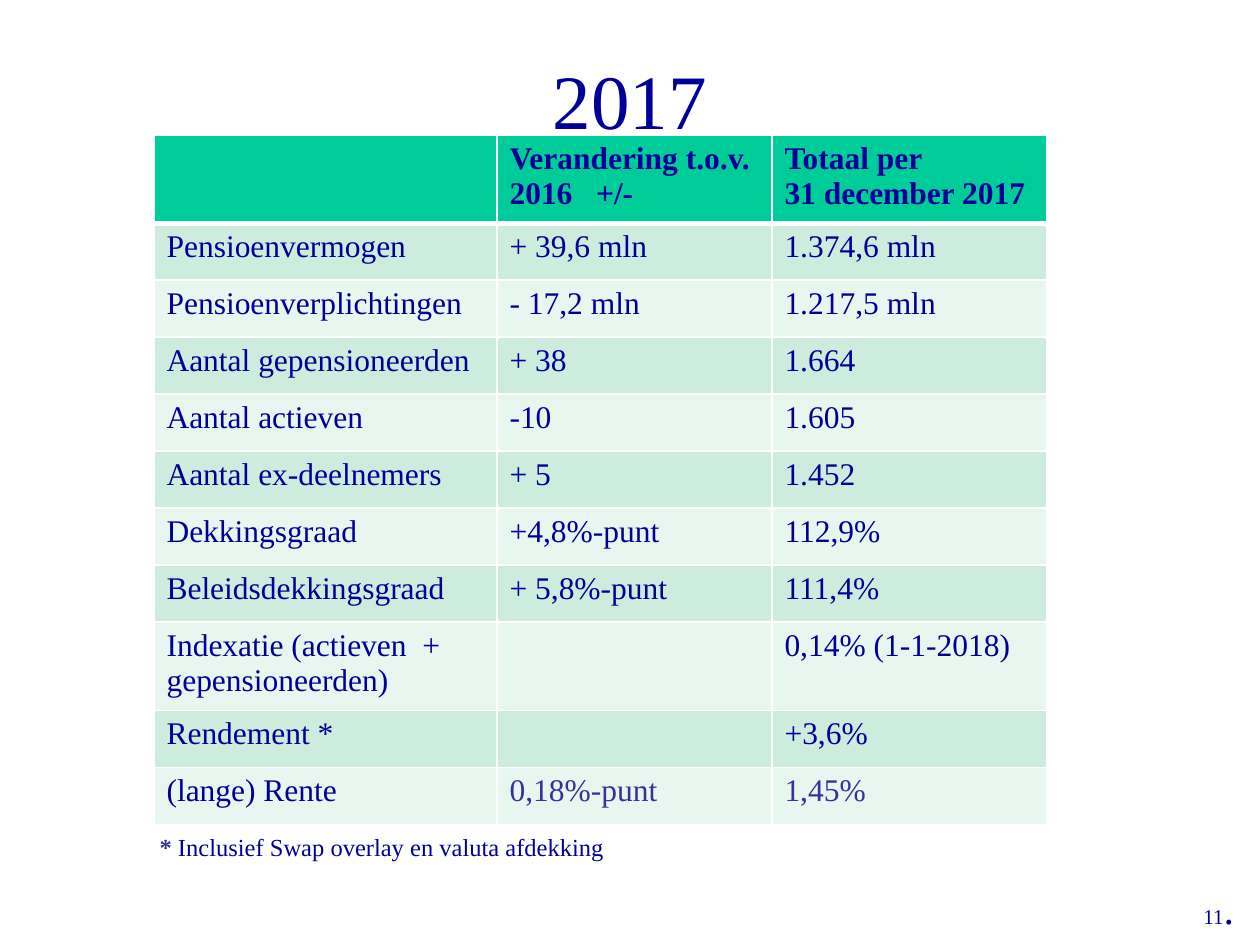
from dataclasses import dataclass

from lxml import etree
from pptx import Presentation
from pptx.dml.color import RGBColor
from pptx.enum.text import MSO_ANCHOR, PP_ALIGN
from pptx.oxml.ns import qn
from pptx.util import Emu, Pt

TOP, CENTER = MSO_ANCHOR.TOP, PP_ALIGN.CENTER


@dataclass(frozen=True)
class Theme:
    font: str = "Times New Roman"
    ink: str = "000099"
    accent: str = "333399"
    header: str = "00CC99"
    bands: tuple = ("CCECDE", "E7F6EF")
    rule: str = "FFFFFF"
    title_size: int = 44
    table_size: int = 18
    note_size: int = 14
    number_size: int = 12
    dot_size: int = 24


THEME = Theme()

YEAR = "2017"
HEADINGS = ("", "Verandering t.o.v. 2016   +/-", "Totaal per \v31 december 2017")
FIGURES = [
    ("Pensioenvermogen", "+ 39,6 mln", "1.374,6 mln"),
    ("Pensioenverplichtingen", "- 17,2 mln", "1.217,5 mln"),
    ("Aantal gepensioneerden", "+ 38", "1.664"),
    ("Aantal actieven", "-10", "1.605"),
    ("Aantal ex-deelnemers", "+ 5", "1.452"),
    ("Dekkingsgraad", "+4,8%-punt", "112,9%"),
    ("Beleidsdekkingsgraad", "+ 5,8%-punt", "111,4%"),
    ("Indexatie (actieven  + gepensioneerden)", "", "0,14% (1-1-2018)"),
    ("Rendement *", "", "+3,6%"),
    ("(lange) Rente", "0,18%-punt", "1,45%"),
]
ACCENTED = {"0,18%-punt", "1,45%"}
TALL_ROWS = {0, 8}
FOOTNOTE = ("* ", "Inclusief Swap overlay en valuta afdekking")
PAGE_NUMBER = ("11", ".")

TITLE_BOX = (63, 38, 1134, 157)
NOTE_BOX = (84, 826, 1134, 74)
NUMBER_BOX = (1191, 876, 60, 63)
TABLE_ORIGIN = (154, 135)
COLUMN_WIDTHS = (343, 275, 275)
ROW_HEIGHT, TALL_HEIGHT = 57, 86


def px(length):
    return Emu(round(length * 914400 / 126))


def place(shape, box):
    shape.left, shape.top, shape.width, shape.height = map(px, box)


def style(font, size, color=THEME.ink, bold=False):
    font.name, font.size, font.bold = THEME.font, Pt(size), bold
    font.color.rgb = RGBColor.from_string(color)


def add_border(cell, side, points):
    line = etree.SubElement(cell._tc.get_or_add_tcPr(), qn(f"a:ln{side}"), w=str(Pt(points)))
    fill = etree.SubElement(line, qn("a:solidFill"))
    etree.SubElement(fill, qn("a:srgbClr"), val=THEME.rule)


def fill_title(title):
    place(title, TITLE_BOX)
    frame = title.text_frame
    frame.text = YEAR
    frame.vertical_anchor = TOP
    frame.margin_top = px(15)
    heading = frame.paragraphs[0]
    heading.alignment = CENTER
    style(heading.font, THEME.title_size)


def fill_footnote(body):
    place(body, NOTE_BOX)
    frame = body.text_frame
    frame.vertical_anchor = TOP
    note = frame.paragraphs[0]
    properties = note._p.get_or_add_pPr()
    properties.set("marL", str(px(63)))
    properties.set("indent", "0")
    note.space_before = Pt(0)
    etree.SubElement(properties, qn("a:buNone"))
    star, remark = (note.add_run() for _ in FOOTNOTE)
    star.text, remark.text = FOOTNOTE
    style(star.font, THEME.note_size, THEME.accent, True)
    style(remark.font, THEME.note_size)


def add_page_number(slide):
    number = slide.shapes.add_textbox(*map(px, NUMBER_BOX))
    number.text_frame.word_wrap = False
    line = number.text_frame.paragraphs[0]
    for text, size in zip(PAGE_NUMBER, (THEME.number_size, THEME.dot_size)):
        run = line.add_run()
        run.text = text
        style(run.font, size)


def add_figures(slide):
    rows = [HEADINGS, *FIGURES]
    heights = [TALL_HEIGHT if i in TALL_ROWS else ROW_HEIGHT for i in range(len(rows))]
    size = (sum(COLUMN_WIDTHS), sum(heights))
    table = slide.shapes.add_table(
        len(rows), len(HEADINGS), *map(px, TABLE_ORIGIN + size)
    ).table
    for column, width in zip(table.columns, COLUMN_WIDTHS):
        column.width = px(width)
    for i, (texts, height) in enumerate(zip(rows, heights)):
        table.rows[i].height = px(height)
        fill = THEME.bands[(i - 1) % 2] if i else THEME.header
        borders = {"L": 1, "R": 1, "T": 3 if i == 1 else 1, "B": 1 if i else 3}
        for cell, text in zip(table.rows[i].cells, texts):
            for side, points in borders.items():
                add_border(cell, side, points)
            cell.fill.solid()
            cell.fill.fore_color.rgb = RGBColor.from_string(fill)
            cell.text = text
            color = THEME.accent if text in ACCENTED else THEME.ink
            style(cell.text_frame.paragraphs[0].font, THEME.table_size, color, i == 0)


def main():
    deck = Presentation()
    deck.slide_width, deck.slide_height = px(1260), px(945)
    slide = deck.slides.add_slide(deck.slide_layouts[1])
    add_page_number(slide)
    fill_title(slide.shapes.title)
    fill_footnote(slide.placeholders[1])
    add_figures(slide)
    deck.save("out.pptx")


if __name__ == "__main__":
    main()
